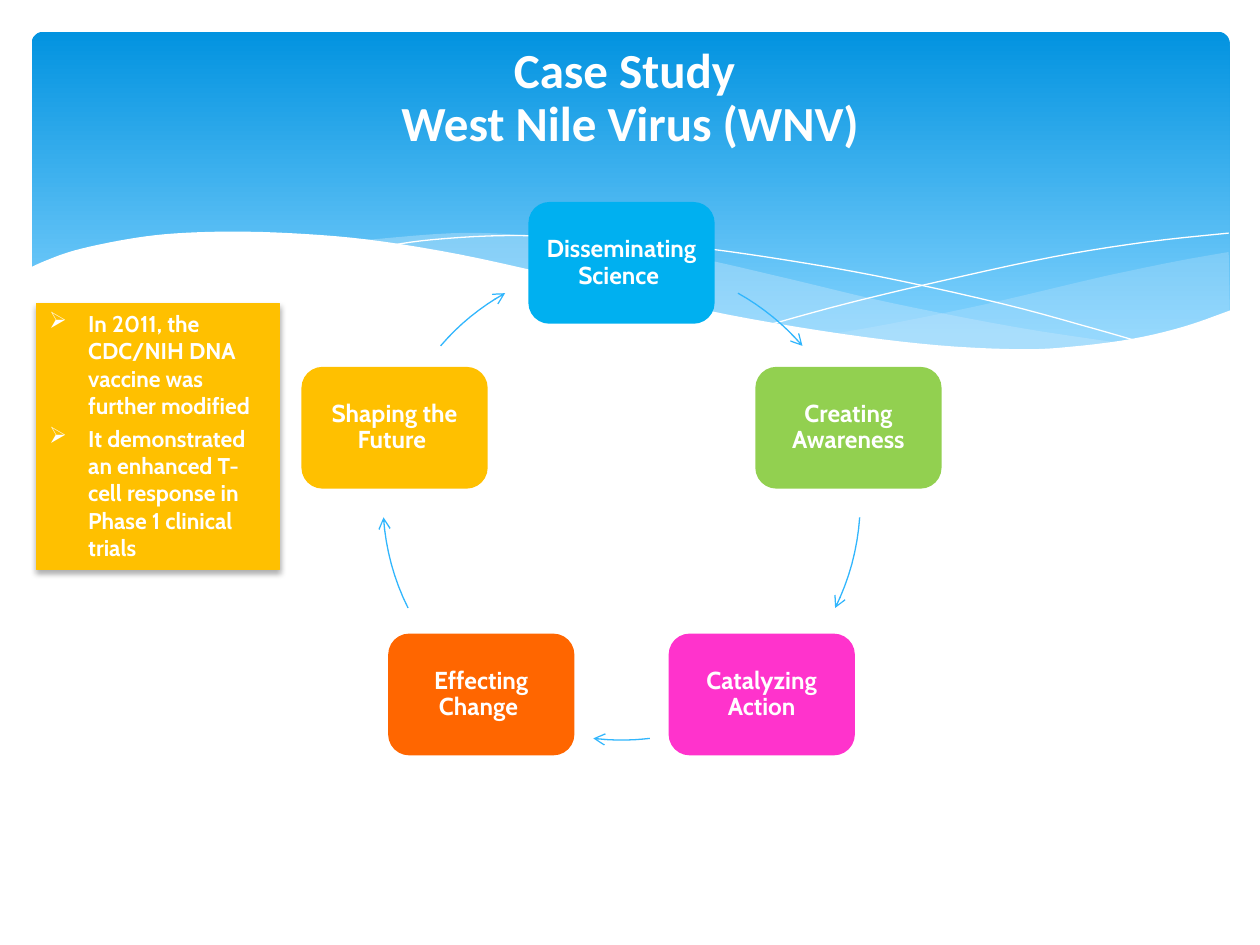
import math
from dataclasses import dataclass
from typing import Optional

from lxml import etree
from pptx import Presentation
from pptx import util as u
from pptx.dml.color import RGBColor
from pptx.enum import shapes as kinds, text as t
from pptx.oxml import ns

Point = tuple[float, float]  # centimetres


@dataclass(frozen=True)
class Theme:
    white: str = "FFFFFF"
    sky_top: str = "0293E0"
    sky_bottom: str = "83D3FE"
    wash: str = "C6E7FC"
    arrow: str = "31B6FD"
    amber: str = "FFC000"
    heading_font: str = "Calibri"
    body_font: str = "Cabin"
    title_size: float = 28
    stage_size: float = 14
    note_size: float = 13


@dataclass(frozen=True)
class Stage:
    label: str
    color: str
    arrow_from: float  # degrees clockwise from the top of the cycle
    arrow_to: float


@dataclass(frozen=True)
class Wave:
    curves: list[list[Point]]
    fill: Optional[str] = None
    opacity: int = 100


THEME = Theme()
CENTER: Point = (12.53, 10.11)
RADIUS = 4.81
STAGE_W, STAGE_H = 3.71, 2.41

STAGES = [
    Stage("Disseminating Science ", "00B0F0", 29.2, 49.3),
    Stage("Creating Awareness", "92D050", 93.8, 116.5),
    Stage("Catalyzing Action", "FF33CC", 173.2, 186.8),
    Stage("Effecting Change ", "FF6600", 243.5, 266.2),
    Stage("Shaping the Future ", THEME.amber, 310.7, 330.8),
]

NOTES = [
    "In 2011, the CDC/NIH DNA vaccine was further modified",
    "It demonstrated an enhanced T-cell response in Phase 1 clinical trials",
]

WAVES = [
    # Pale wash at the right edge
    Wave([[(24.77, 5.08), (23.75, 5.26), (22.63, 5.49), (21.87, 5.66), (19.79, 6.15),
           (17.93, 6.53), (16.79, 6.73)],
          [(16.79, 6.73), (17.91, 6.88), (19.23, 7.01), (20.68, 7.06), (22.15, 6.96),
           (23.39, 6.73), (24.1, 6.53), (24.79, 6.27)]], THEME.wash, 29),
    # Long wash across the middle
    Wave([[(22.68, 6.93), (20.5, 6.6), (17.93, 6.1), (15.98, 5.64), (14.1, 5.21),
           (12.42, 4.93), (10.67, 4.75), (9.17, 4.7), (7.26, 4.85)],
          [(7.26, 4.85), (8.69, 5.05), (10.26, 5.36), (11.4, 5.64), (13.46, 6.1),
           (15.27, 6.48), (16.89, 6.76), (18.34, 6.96), (19.94, 7.06), (21.54, 7.04),
           (22.68, 6.93)]], THEME.wash, 40),
    # Two hairlines
    Wave([[(7.85, 4.95), (8.74, 4.83), (10.19, 4.75), (11.91, 4.8), (13.54, 4.93),
           (15.44, 5.18), (17.65, 5.56), (20.19, 6.12), (22.07, 6.63), (23.04, 6.91)]]),
    Wave([[(15.57, 6.53), (17.07, 6.12), (19, 5.66), (21.23, 5.18), (23.11, 4.88),
           (24.77, 4.7)]]),
    # White foreground
    Wave([[(24.82, 6.25), (23.88, 6.58), (22.83, 6.83), (21.59, 6.99), (20.55, 7.04),
           (18.9, 6.96), (16.97, 6.73), (14.71, 6.35), (12.78, 5.92), (11.35, 5.59),
           (9.27, 5.13), (7.42, 4.83), (5.84, 4.7), (4.5, 4.67), (3.35, 4.72),
           (2.41, 4.85), (1.5, 5.05), (0.91, 5.26), (0.58, 5.41)],
          [(0.58, 8.36), (24.82, 8.36)]], THEME.white),
]


def rgb(color: str) -> RGBColor:
    return RGBColor.from_string(color)


def add_xml(parent, tag: str, **attributes: str):
    return etree.SubElement(parent, ns.qn(tag), attributes)


def add_run(paragraph, words: str, font: str, size: float) -> None:
    run = paragraph.add_run()
    run.text = words
    run.font.name, run.font.size, run.font.bold = font, u.Pt(size), True
    run.font.color.rgb = rgb(THEME.white)


def add_block(slide, kind, left: float, top: float, width: float, height: float,
              color: str, line_width: float):
    block = slide.shapes.add_shape(kind, u.Cm(left), u.Cm(top), u.Cm(width), u.Cm(height))
    block.shadow.inherit = False
    block.fill.solid()
    block.fill.fore_color.rgb = block.line.color.rgb = rgb(color)
    block.line.width = u.Pt(line_width)
    block.text_frame.word_wrap = True
    return block


def smooth(points: list[Point], steps: int = 5) -> list[Point]:
    """Sample a Catmull-Rom curve through the points."""
    if len(points) < 3:
        return points
    padded = [points[0], *points, points[-1]]
    sampled = [points[0]]
    for a, b, c, d in zip(padded, padded[1:], padded[2:], padded[3:]):
        for s in (i / steps for i in range(1, steps + 1)):
            x, y = (0.5 * (2 * q + (r - p) * s + (2 * p - 5 * q + 4 * r - v) * s**2
                           + (3 * q - p - 3 * r + v) * s**3)
                    for p, q, r, v in zip(a, b, c, d))
            sampled.append((x, y))
    return sampled


def add_outline(slide, points: list[Point], closed: bool):
    first, *rest = [(u.Cm(x), u.Cm(y)) for x, y in points]
    builder = slide.shapes.build_freeform(*first)
    builder.add_line_segments(rest, close=closed)
    outline = builder.convert_to_shape()
    outline.shadow.inherit = False
    return outline


def draw_wave(slide, wave: Wave) -> None:
    points = [point for curve in wave.curves for point in smooth(curve)]
    outline = add_outline(slide, points, closed=wave.fill is not None)
    if wave.fill is None:
        outline.fill.background()
        outline.line.color.rgb = rgb(THEME.white)
        outline.line.width = u.Pt(0)
        return
    outline.line.fill.background()
    outline.fill.solid()
    outline.fill.fore_color.rgb = rgb(wave.fill)
    if wave.opacity < 100:
        color = outline.element.spPr.find(ns.qn("a:solidFill"))[0]
        add_xml(color, "a:alpha", val=str(wave.opacity * 1000))


def draw_backdrop(slide) -> None:
    sky = add_block(slide, kinds.MSO_SHAPE.ROUNDED_RECTANGLE, 0.64, 0.64, 24.15, 6.86,
                    THEME.sky_top, 0)
    sky.adjustments[0] = 0.034
    sky.line.fill.background()
    sky.fill.gradient()
    sky.fill.gradient_angle = 270
    for stop, color, place in zip(sky.fill.gradient_stops,
                                  (THEME.sky_top, THEME.sky_bottom), (0, 0.9)):
        stop.color.rgb, stop.position = rgb(color), place
    for wave in WAVES:
        draw_wave(slide, wave)


def draw_title(slide) -> None:
    title = slide.shapes.title
    slide.shapes.element.append(title.element)  # bring in front of the backdrop
    title.left, title.top, title.width, title.height = map(u.Cm, (1.27, 0.76, 22.86, 2.41))
    frame = title.text_frame
    frame.auto_size, frame.vertical_anchor = t.MSO_AUTO_SIZE.NONE, t.MSO_ANCHOR.BOTTOM
    heading = frame.paragraphs[0]
    heading.alignment, heading.line_spacing = t.PP_ALIGN.CENTER, u.Pt(30)
    add_run(heading, "Case Study ", THEME.heading_font, THEME.title_size)
    heading.add_line_break()
    add_run(heading, "West Nile Virus (WNV)", THEME.heading_font, THEME.title_size)


def draw_notes(slide) -> None:
    card = add_block(slide, kinds.MSO_SHAPE.RECTANGLE, 0.74, 6.12, 4.9, 5.36,
                     THEME.amber, 0.75)
    effects = card.element.spPr.find(ns.qn("a:effectLst"))
    shadow = add_xml(effects, "a:outerShdw", blurRad=str(u.Pt(3.5)), dist=str(u.Pt(2.2)),
                     dir="5400000", rotWithShape="0")
    add_xml(add_xml(shadow, "a:srgbClr", val="000000"), "a:alpha", val="32000")
    frame = card.text_frame
    frame.vertical_anchor = t.MSO_ANCHOR.TOP
    for index, note in enumerate(NOTES):
        item = frame.add_paragraph() if index else frame.paragraphs[0]
        item.alignment, item.space_after = t.PP_ALIGN.LEFT, u.Pt(3)
        add_run(item, note, THEME.body_font, THEME.note_size)
        # Hanging white bullet
        props = item._p.get_or_add_pPr()
        props.set("marL", str(u.Cm(0.79)))
        props.set("indent", str(-u.Cm(0.79)))
        add_xml(add_xml(props, "a:buClr"), "a:srgbClr", val=THEME.white)
        add_xml(props, "a:buChar", char="➢")


def on_cycle(degrees: float) -> Point:
    angle = math.radians(degrees)
    return CENTER[0] + RADIUS * math.sin(angle), CENTER[1] - RADIUS * math.cos(angle)


def draw_stage(slide, stage: Stage, degrees: float) -> None:
    x, y = on_cycle(degrees)
    box = add_block(slide, kinds.MSO_SHAPE.ROUNDED_RECTANGLE, x - STAGE_W / 2,
                    y - STAGE_H / 2, STAGE_W, STAGE_H, stage.color, 1.25)
    frame = box.text_frame
    frame.margin_left = frame.margin_right = u.Cm(0.1)
    frame.vertical_anchor = t.MSO_ANCHOR.MIDDLE
    label = frame.paragraphs[0]
    label.alignment, label.line_spacing = t.PP_ALIGN.CENTER, 0.9
    add_run(label, stage.label, THEME.body_font, THEME.stage_size)
    # Curved arrow to the next stage
    steps = 8
    sweep = stage.arrow_to - stage.arrow_from
    arc = add_outline(slide, [on_cycle(stage.arrow_from + sweep * i / steps)
                              for i in range(steps + 1)], closed=False)
    arc.fill.background()
    arc.line.color.rgb, arc.line.width = rgb(THEME.arrow), u.Pt(0.75)
    add_xml(arc.line._get_or_add_ln(), "a:tailEnd", type="arrow")


def main() -> None:
    deck = Presentation()
    deck.slide_width, deck.slide_height = u.Cm(25.4), u.Cm(19.05)
    slide = deck.slides.add_slide(deck.slide_layouts[5])
    draw_backdrop(slide)
    draw_notes(slide)
    draw_title(slide)
    for index, stage in enumerate(STAGES):
        draw_stage(slide, stage, index * 360 / len(STAGES))
    deck.save("out.pptx")


if __name__ == "__main__":
    main()
